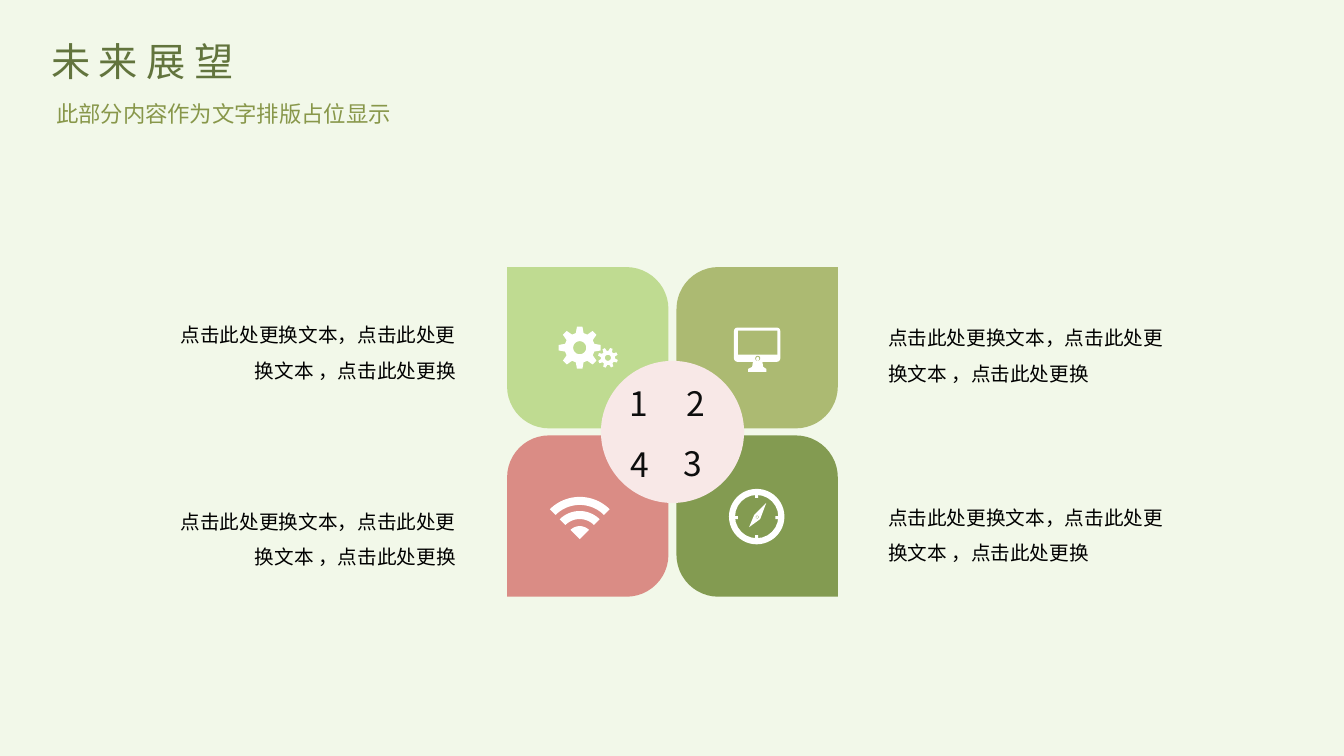
from math import cos, pi, sin

from lxml.etree import SubElement
from pptx import Presentation
from pptx.dml.color import RGBColor
from pptx.enum.shapes import MSO_SHAPE
from pptx.enum.text import MSO_ANCHOR, PP_ALIGN
from pptx.oxml.ns import qn
from pptx.util import Inches, Pt

FONT = "Noto Sans CJK SC"
BACKGROUND = RGBColor(0xF2, 0xF8, 0xE9)
TITLE_GREEN = RGBColor(0x62, 0x74, 0x3D)
SUBTITLE_GREEN = RGBColor(0x88, 0x97, 0x4A)
LIGHT_GREEN = RGBColor(0xBF, 0xDB, 0x91)
OLIVE = RGBColor(0xAC, 0xBA, 0x72)
DARK_GREEN = RGBColor(0x83, 0x9B, 0x51)
CORAL = RGBColor(0xDA, 0x8C, 0x85)
PALE_PINK = RGBColor(0xF8, 0xE8, 0xE7)
NEAR_BLACK = RGBColor(0x0D, 0x0D, 0x0D)
BLACK = RGBColor(0, 0, 0)
WHITE = RGBColor(0xFF, 0xFF, 0xFF)

prs = Presentation()
prs.slide_width = Inches(13.33)
prs.slide_height = Inches(7.5)
slide = prs.slides.add_slide(prs.slide_layouts[5])
slide.background.fill.solid()
slide.background.fill.fore_color.rgb = BACKGROUND


def paint(shape, color):
    shape.fill.solid()
    shape.fill.fore_color.rgb = color
    shape.line.fill.background()
    shape.shadow.inherit = False
    return shape


def write(holder, box, text, size, color, align, spacing=1.0, wrap=True):
    holder.left, holder.top, holder.width, holder.height = map(Inches, box)
    frame = holder.text_frame
    frame.word_wrap = wrap
    frame.vertical_anchor = MSO_ANCHOR.TOP
    frame.text = text
    paragraph = frame.paragraphs[0]
    paragraph.alignment = align
    paragraph.line_spacing = spacing
    paragraph.font.size = Pt(size)
    paragraph.font.name = FONT
    paragraph.font.color.rgb = color
    defaults = paragraph._p.pPr.find(qn("a:defRPr"))
    SubElement(defaults, qn("a:ea")).set("typeface", FONT)
    return defaults


title_defaults = write(slide.shapes.title, (0.41, 0.32, 2.75, 0.57), "未来展望",
                       28, TITLE_GREEN, PP_ALIGN.LEFT)
title_defaults.set("spc", "600")
subtitle = slide.shapes.add_textbox(0, 0, 0, 0)
write(subtitle, (0.41, 0.89, 3.57, 0.4), "此部分内容作为文字排版占位显示",
      16, SUBTITLE_GREEN, PP_ALIGN.RIGHT, 1.2, False)

petals = [
    (5.03, 2.65, LIGHT_GREEN, 0, 0.26),
    (6.71, 2.65, OLIVE, 0.26, 0),
    (6.71, 4.32, DARK_GREEN, 0, 0.26),
    (5.03, 4.32, CORAL, 0.26, 0),
]
for left, top, color, main_corner, cross_corner in petals:
    petal = slide.shapes.add_shape(MSO_SHAPE.ROUND_2_DIAG_RECTANGLE, Inches(left),
                                   Inches(top), Inches(1.6), Inches(1.6))
    petal.adjustments[0] = main_corner
    petal.adjustments[1] = cross_corner
    paint(petal, color)

hub = slide.shapes.add_shape(MSO_SHAPE.OVAL, Inches(5.96), Inches(3.58),
                             Inches(1.42), Inches(1.41))
paint(hub, PALE_PINK)

numbers = [("1", 6.14, 3.75), ("2", 6.7, 3.75), ("3", 6.67, 4.34), ("4", 6.15, 4.35)]
for number, left, top in numbers:
    write(slide.shapes.add_textbox(0, 0, 0, 0), (left, top, 0.4, 0.5), number,
          24, NEAR_BLACK, PP_ALIGN.CENTER, wrap=False)

captions = [
    (1.63, 3.04, 2.99, PP_ALIGN.RIGHT),
    (8.71, 3.07, 3.05, PP_ALIGN.LEFT),
    (8.71, 4.85, 3.05, PP_ALIGN.LEFT),
    (1.63, 4.89, 2.99, PP_ALIGN.RIGHT),
]
for left, top, width, align in captions:
    write(slide.shapes.add_textbox(0, 0, 0, 0), (left, top, width, 0.77),
          "点击此处更换文本，点击此处更换文本 ，点击此处更换", 14, BLACK, align, 1.5)

outlines = []
gears = [(5.75, 3.45, 0.21, 0.15, 0.065, 0), (6.03, 3.55, 0.1, 0.07, 0.03, 0.35)]
for x, y, tip, root, hole, turn in gears:
    rim = []
    for tooth in range(8):
        for offset, radius in ((-0.26, root), (-0.13, tip), (0.13, tip), (0.26, root)):
            angle = tooth * pi / 4 + offset + turn
            rim.append((x + radius * cos(angle), y + radius * sin(angle)))
    bore = [(x + hole * cos(step * pi / 12), y - hole * sin(step * pi / 12))
            for step in range(24)]
    outlines.append([rim, bore])

wifi_x, wifi_y = 5.75, 5.35
for inner, outer in ((0, 0.13), (0.2, 0.28), (0.34, 0.42)):
    sweep = [(step - 12) * pi / 48 for step in range(25)]
    band = [(wifi_x + outer * sin(a), wifi_y - outer * cos(a)) for a in sweep]
    band += [(wifi_x + inner * sin(a), wifi_y - inner * cos(a)) for a in reversed(sweep)]
    outlines.append([band])

needle = [(7.6, 4.99), (7.54, 5.15), (7.43, 5.23), (7.48, 5.11)]
pivot = [(7.51 + 0.015 * cos(step * pi / 6), 5.13 - 0.015 * sin(step * pi / 6))
         for step in range(12)]
stand = [(7.47, 3.58), (7.56, 3.58), (7.57, 3.64), (7.6, 3.66),
         (7.6, 3.69), (7.42, 3.69), (7.42, 3.66), (7.46, 3.64)]
outlines += [[needle, pivot], [stand]]

for contours in outlines:
    builder = None
    for contour in contours:
        points = [(Inches(x), Inches(y)) for x, y in contour]
        if builder is None:
            builder = slide.shapes.build_freeform(*points[0])
        else:
            builder.move_to(*points[0])
        builder.add_line_segments(points[1:], close=True)
    paint(builder.convert_to_shape(), WHITE)

icon_parts = [
    (MSO_SHAPE.ROUNDED_RECTANGLE, 7.28, 3.25, 0.46, 0.34, WHITE, 0.1),
    (MSO_SHAPE.RECTANGLE, 7.32, 3.28, 0.39, 0.24, OLIVE, None),
    (MSO_SHAPE.OVAL, 7.49, 3.53, 0.05, 0.05, OLIVE, None),
    (MSO_SHAPE.OVAL, 7.5, 3.54, 0.03, 0.04, WHITE, None),
    (MSO_SHAPE.DONUT, 7.23, 4.85, 0.55, 0.55, WHITE, 0.11),
    (MSO_SHAPE.RECTANGLE, 7.49, 4.9, 0.03, 0.04, WHITE, None),
    (MSO_SHAPE.RECTANGLE, 7.49, 5.31, 0.03, 0.04, WHITE, None),
    (MSO_SHAPE.RECTANGLE, 7.28, 5.12, 0.04, 0.03, WHITE, None),
    (MSO_SHAPE.RECTANGLE, 7.69, 5.12, 0.04, 0.03, WHITE, None),
    (MSO_SHAPE.OVAL, 7.5, 5.12, 0.02, 0.02, WHITE, None),
]
for preset, left, top, width, height, color, adjustment in icon_parts:
    part = slide.shapes.add_shape(preset, Inches(left), Inches(top),
                                  Inches(width), Inches(height))
    if adjustment is not None:
        part.adjustments[0] = adjustment
    paint(part, color)

prs.save("out.pptx")
